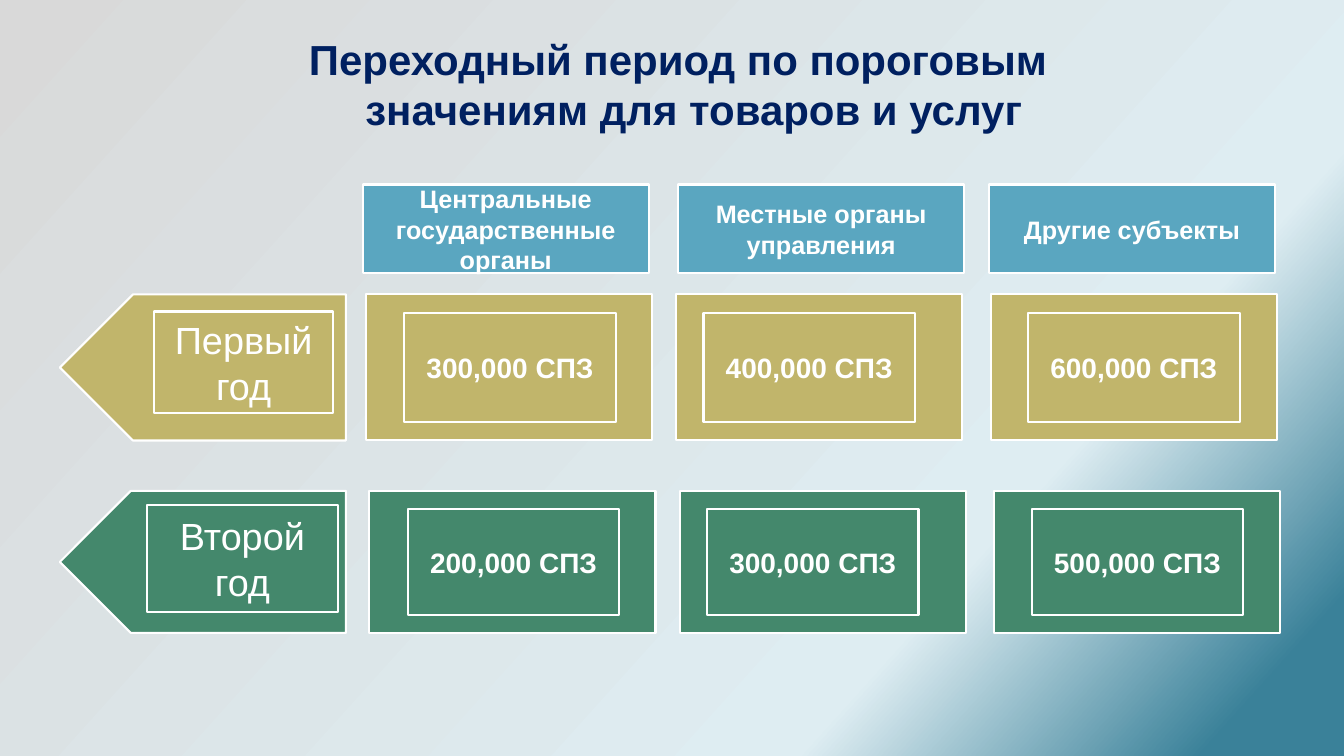
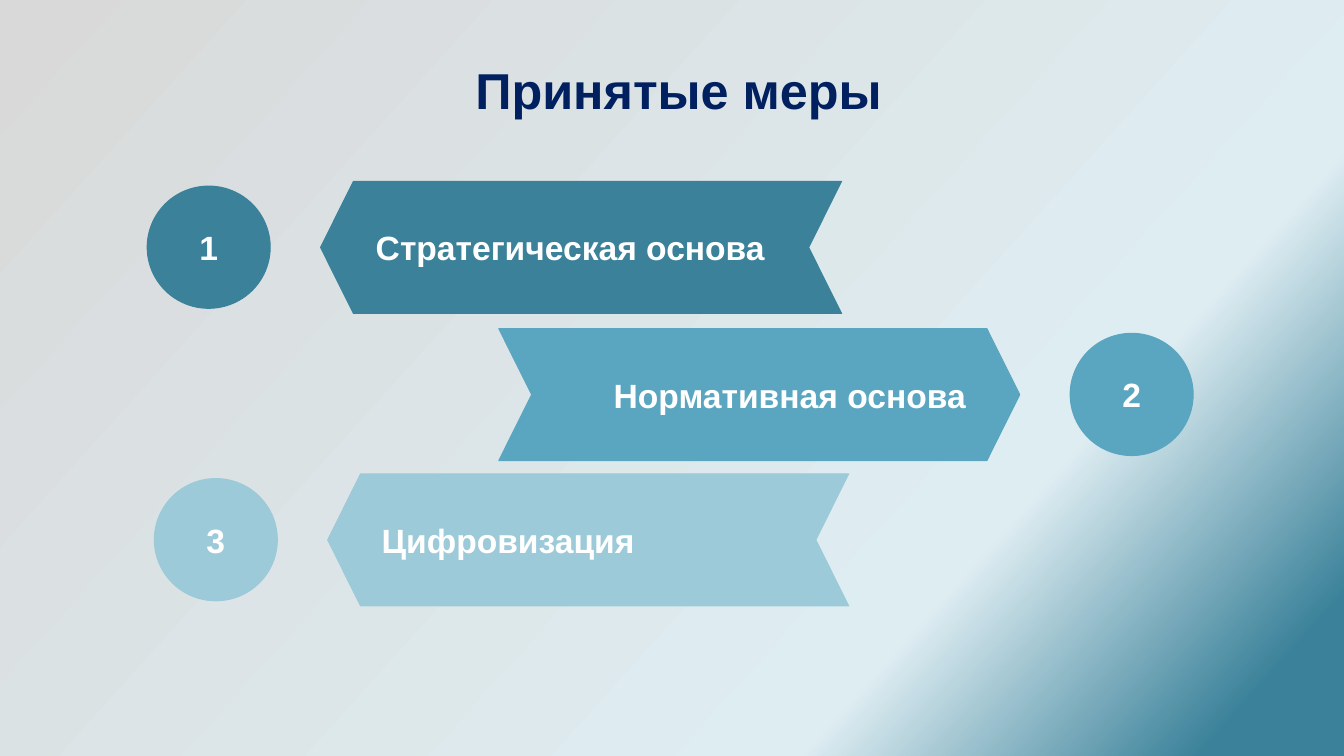
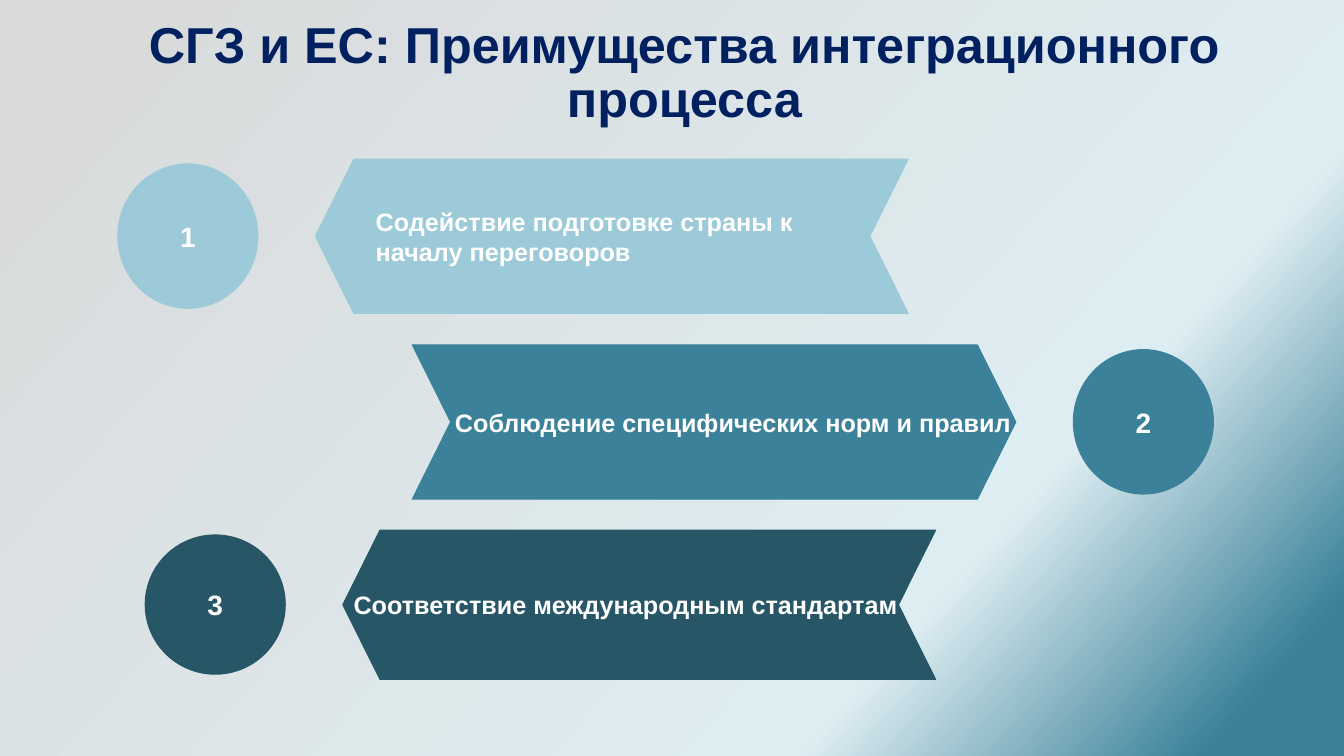
import copy

import pptx
import pptx.dml.color
import pptx.enum.shapes
import pptx.enum.text
import pptx.oxml.ns
import pptx.util
from pptx.dml.color import RGBColor
from pptx.enum.shapes import MSO_SHAPE
from pptx.enum.text import MSO_ANCHOR, MSO_AUTO_SIZE, PP_ALIGN
from pptx.util import Cm, Pt

NAVY = RGBColor(0x00, 0x20, 0x60)
WHITE = RGBColor(0xFF, 0xFF, 0xFF)
GREY = RGBColor(0xD9, 0xD9, 0xD9)
ICE = RGBColor(0xDE, 0xED, 0xF2)
LIGHT_BLUE = RGBColor(0x9C, 0xCA, 0xD9)
BLUE = RGBColor(0x5A, 0xA6, 0xC0)
TEAL = RGBColor(0x3A, 0x81, 0x99)
DARK_TEAL = RGBColor(0x27, 0x56, 0x66)
GOLD = RGBColor(0xC1, 0xB5, 0x6B)
GREEN = RGBColor(0x44, 0x88, 0x6C)

FONT = "Arial"
TITLE_ONLY = 5


class Deck:
    """Shared style and the slide being filled; all lengths are in centimetres."""

    def __init__(self):
        self.presentation = pptx.Presentation()
        self.presentation.slide_width = Cm(33.87)
        self.presentation.slide_height = Cm(19.05)
        self.slide = None
        self.set_background([(0, GREY), (0.73, ICE), (0.93, TEAL)], 42)

    def set_background(self, stops, clockwise_angle):
        master = self.presentation.slide_master
        fill = master.background.fill
        fill.gradient()
        fill.gradient_angle = 360 - clockwise_angle
        stop_list = master.element.find(".//" + pptx.oxml.ns.qn("a:gsLst"))
        while len(stop_list) < len(stops):
            stop_list.append(copy.deepcopy(stop_list[-1]))
        for stop, (position, color) in zip(fill.gradient_stops, stops):
            stop.position = position
            stop.color.rgb = color

    def set_text(self, shape, text, size, color=WHITE, bold=True,
                 align=PP_ALIGN.CENTER, inset=0.25):
        frame = shape.text_frame
        frame.word_wrap = True
        frame.auto_size = MSO_AUTO_SIZE.NONE
        frame.vertical_anchor = MSO_ANCHOR.MIDDLE
        frame.margin_left = frame.margin_right = Cm(inset)
        frame.margin_top = frame.margin_bottom = Cm(inset)
        frame.text = text
        paragraph = frame.paragraphs[0]
        paragraph.alignment = align
        paragraph.font.name = FONT
        paragraph.font.size = Pt(size)
        paragraph.font.bold = bold
        paragraph.font.color.rgb = color
        return paragraph

    def add_slide(self, title, left, top, width, height, size=36):
        layout = self.presentation.slide_layouts[TITLE_ONLY]
        self.slide = self.presentation.slides.add_slide(layout)
        shape = self.slide.shapes.title
        shape.left, shape.top = Cm(left), Cm(top)
        shape.width, shape.height = Cm(width), Cm(height)
        paragraph = self.set_text(shape, title, size, NAVY, inset=0.33)
        paragraph.line_spacing = 0.9
        return shape

    def shape(self, kind, left, top, width, height, color, line=WHITE,
              line_width=1.5, flip=False):
        shape = self.slide.shapes.add_shape(
            kind, Cm(left), Cm(top), Cm(width), Cm(height))
        shape.shadow.inherit = False
        shape.fill.solid()
        shape.fill.fore_color.rgb = color
        shape.line.color.rgb = line
        shape.line.width = Pt(line_width)
        if flip:
            shape.element.spPr.find(pptx.oxml.ns.qn("a:xfrm")).set("flipH", "1")
        return shape

    def box(self, text, left, top, width, height, color, size, **style):
        shape = self.shape(MSO_SHAPE.RECTANGLE, left, top, width, height, color)
        self.set_text(shape, text, size, **style)

    def label(self, text, left, top, width, height, size, align):
        shape = self.slide.shapes.add_textbox(
            Cm(left), Cm(top), Cm(width), Cm(height))
        self.set_text(shape, text, size, align=align)

    def step(self, number, text, color, chevron, label, circle_width, gap,
             sizes, points_right):
        """Chevron with its label, and a numbered circle in front of its tip."""
        left, top, width, height = chevron
        label_left, label_width = label
        label_size, number_size = sizes
        arrow = self.shape(MSO_SHAPE.CHEVRON, left, top, width, height, color,
                           color, 0.75, flip=not points_right)
        arrow.adjustments[0] = 0.249
        circle_height = height - 0.25
        circle_left = left + width + gap if points_right else left - gap - circle_width
        circle = self.shape(MSO_SHAPE.OVAL, circle_left, top + 0.12,
                            circle_width, circle_height, color, color, 0.75)
        self.set_text(circle, str(number), number_size)
        align = PP_ALIGN.RIGHT if points_right else PP_ALIGN.LEFT
        self.label(text, label_left, top, label_width, height, label_size, align)

    def steps(self, rows, circle_width, gap, sizes):
        """Numbered chevrons that point left and right in turn."""
        for number, (text, color, chevron, label) in enumerate(rows, 1):
            self.step(number, text, color, chevron, label, circle_width, gap,
                      sizes, points_right=number % 2 == 0)


def add_thresholds(deck):
    title = deck.add_slide(
        "Переходный период по пороговым значениям для товаров и услуг",
        4.7, 0.71, 24.79, 3.07, size=30)
    frame = title.text_frame
    frame.vertical_anchor = MSO_ANCHOR.TOP
    frame.margin_top = frame.margin_bottom = Cm(0.13)
    frame.margin_left = frame.margin_right = Cm(0.25)
    paragraph = frame.paragraphs[0]
    paragraph.line_spacing = 1.0
    properties = paragraph._p.get_or_add_pPr()
    properties.set("marL", str(Cm(0.79)))
    properties.set("indent", str(Cm(-0.79)))

    cell_width = 7.21
    headers = [
        ("Центральные государственные органы", 9.14),
        ("Местные органы управления", 17.09),
        ("Другие субъекты", 24.92),
    ]
    for text, left in headers:
        deck.box(text, left, 4.65, cell_width, 2.24, BLUE, 18, inset=0.33)

    cell_lefts = [9.22, 17.04, 24.97]
    value_lefts = [10.19, 17.73, 25.91]
    rows = [
        ("Первый год", GOLD, 7.42, 3.68, 0, (3.89, 7.85, 4.5, 2.57),
         ["300,000 СПЗ", "400,000 СПЗ", "600,000 СПЗ"]),
        ("Второй год", GREEN, 12.37, 3.58, 0.09, (3.71, 12.73, 4.8, 2.69),
         ["200,000 СПЗ", "300,000 СПЗ", "500,000 СПЗ"]),
    ]
    for year, color, top, height, shift, year_box, values in rows:
        deck.shape(MSO_SHAPE.PENTAGON, 1.51, top, cell_width, height, color, flip=True)
        deck.box(year, *year_box, color, 27, bold=False)
        for value, cell_left, value_left in zip(values, cell_lefts, value_lefts):
            deck.shape(MSO_SHAPE.RECTANGLE, cell_left + shift, top,
                       cell_width, height, color)
            deck.box(value, value_left + shift, top + 0.46, 5.33,
                     height - 0.92, color, 20)


def add_measures(deck):
    deck.add_slide("Принятые меры", 10.36, 1.52, 13.49, 1.65)
    width, height = 13.13, 3.33
    deck.steps([
        ("Стратегическая основа", TEAL, (8.08, 4.57, width, height), (9.22, 10.87)),
        ("Нормативная основа", BLUE, (12.57, 8.28, width, height), (13.72, 10.87)),
        ("Цифровизация", LIGHT_BLUE, (8.26, 11.94, width, height), (9.37, 10.87)),
    ], circle_width=3.1, gap=1.27, sizes=(24, 24))


def add_benefits(deck):
    deck.add_slide("СГЗ и ЕС: Преимущества интеграционного процесса",
                   2.72, 1.04, 29.06, 1.65)
    deck.steps([
        ("Содействие подготовке страны к началу переговоров", LIGHT_BLUE,
         (7.95, 4.01, 14.94, 3.89), (9.22, 12.37)),
        ("Соблюдение специфических норм и правил", TEAL,
         (10.39, 8.69, 15.21, 3.89), (11, 14.73)),
        ("Соответствие международным стандартам", DARK_TEAL,
         (8.64, 13.36, 14.94, 3.76), (8.66, 14.35)),
    ], circle_width=3.53, gap=1.45, sizes=(18, 20))


def main():
    deck = Deck()
    add_thresholds(deck)
    add_measures(deck)
    add_benefits(deck)
    deck.presentation.save("out.pptx")


if __name__ == "__main__":
    main()
